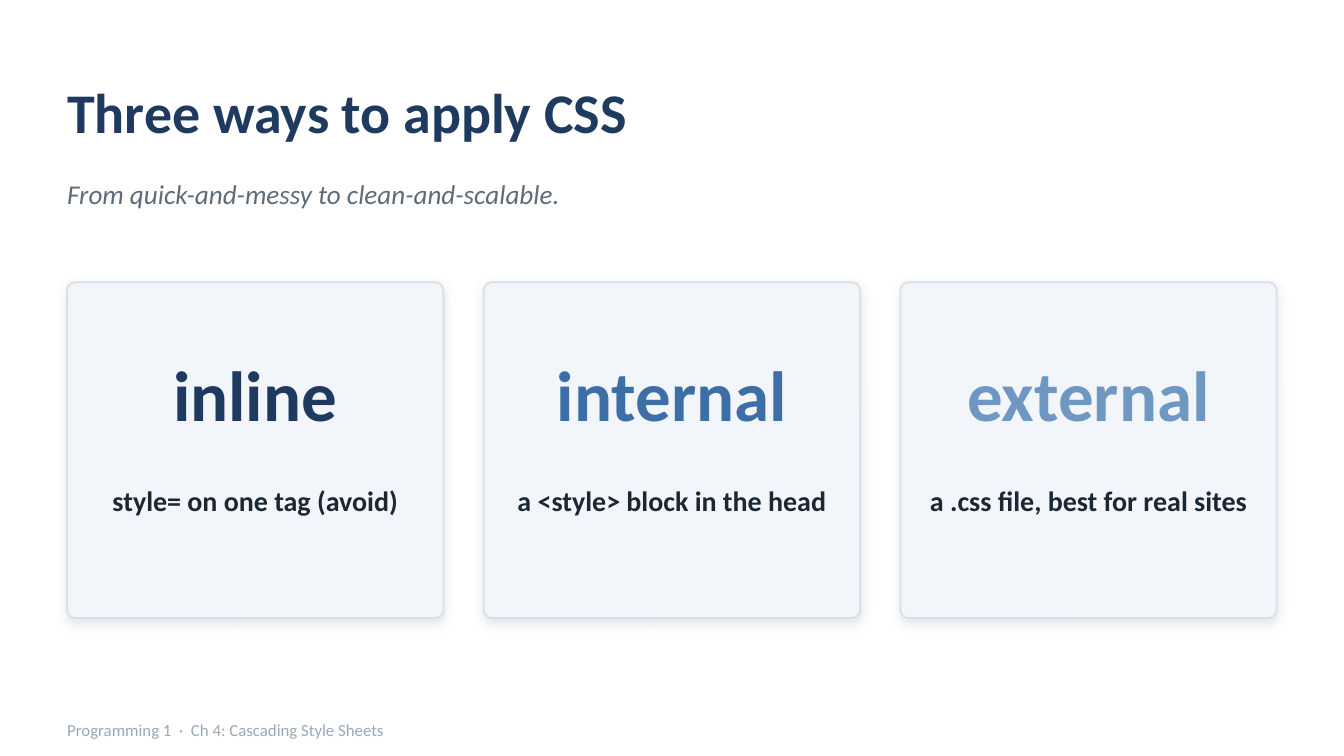
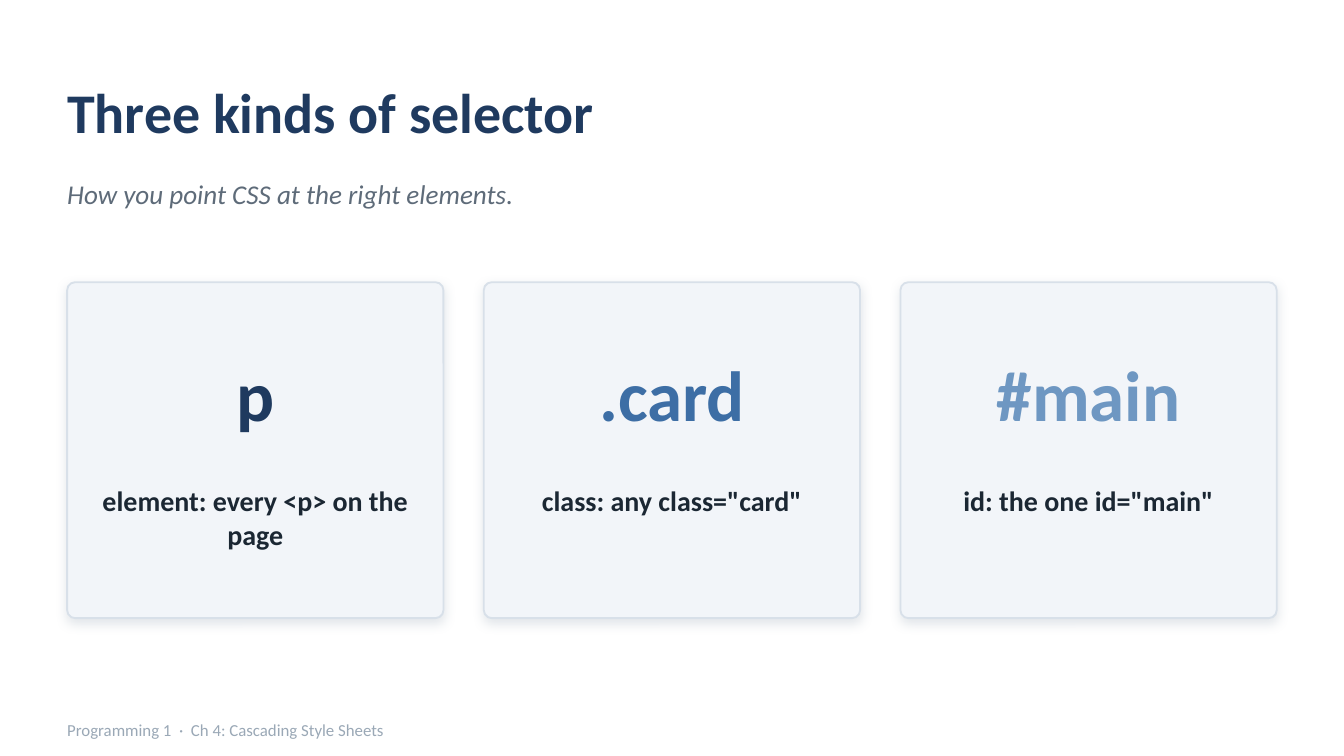
from lxml import etree
from pptx import Presentation
from pptx import util as u
from pptx.dml.color import RGBColor
from pptx.enum import shapes, text
from pptx.oxml import ns

COLORS = {
    "navy": "1F3A5F",
    "blue": "3D6EA5",
    "sky": "6E97C2",
    "ink": "1B2733",
    "slate": "5E6B79",
    "mist": "9AA8B6",
    "card": "F2F5F9",
    "border": "D8E0E9",
    "white": "FFFFFF",
}
FONT = "Calibri"
FOOTER = "Programming 1  ·  Ch 4: Cascading Style Sheets"

MARGIN = 0.5
CONTENT_WIDTH = 9
CARD_TOP, CARD_WIDTH, CARD_HEIGHT = 2.1, 2.8, 2.5
CARD_GAP = (CONTENT_WIDTH - 3 * CARD_WIDTH) / 2
CORNER_RADIUS = 0.06
TERM_INSET, CAPTION_INSET = 0.1, 0.15
TERM_COLORS = ["navy", "blue", "sky"]

SLIDES = [
    {
        "title": "Three ways to apply CSS",
        "subtitle": "From quick-and-messy to clean-and-scalable.",
        "cards": [
            ("inline", "style= on one tag (avoid)"),
            ("internal", "a <style> block in the head"),
            ("external", "a .css file, best for real sites"),
        ],
    },
    {
        "title": "Three kinds of selector",
        "subtitle": "How you point CSS at the right elements.",
        "cards": [
            ("p", "element: every <p> on the page"),
            (".card", 'class: any class="card"'),
            ("#main", 'id: the one id="main"'),
        ],
    },
]


def put_text(slide, content, left, top, width, height, size, color, bold=False,
             italic=False, align="LEFT", anchor="MIDDLE", shape=None):
    """Write one formatted line into the given shape, or into a new text box."""
    box = [u.Inches(length) for length in (left, top, width, height)]
    if shape is None:
        shape = slide.shapes.add_textbox(*box)
    else:
        shape.left, shape.top, shape.width, shape.height = box
    frame = shape.text_frame
    frame.word_wrap = True
    frame.auto_size = text.MSO_AUTO_SIZE.NONE
    frame.vertical_anchor = text.MSO_ANCHOR[anchor]
    frame.margin_left = frame.margin_right = frame.margin_top = frame.margin_bottom = 0
    paragraph = frame.paragraphs[0]
    paragraph.alignment = text.PP_ALIGN[align]
    run = paragraph.add_run()
    run.text = content
    run.font.name = FONT
    run.font.size = u.Pt(size)
    run.font.bold = bold
    run.font.italic = italic
    run.font.color.rgb = RGBColor.from_string(COLORS[color])


def add_card(slide, left):
    """Add a rounded panel with a thin border and a soft shadow below it."""
    card = slide.shapes.add_shape(
        shapes.MSO_SHAPE.ROUNDED_RECTANGLE,
        *[u.Inches(length) for length in (left, CARD_TOP, CARD_WIDTH, CARD_HEIGHT)])
    card.adjustments[0] = CORNER_RADIUS / CARD_HEIGHT
    card.fill.solid()
    card.fill.fore_color.rgb = RGBColor.from_string(COLORS["card"])
    card.line.color.rgb = RGBColor.from_string(COLORS["border"])
    card.line.width = u.Pt(1)
    card.shadow.inherit = False
    effects = card._element.spPr.find(ns.qn("a:effectLst"))
    shadow = etree.SubElement(
        effects, ns.qn("a:outerShdw"), blurRad=str(u.Pt(6)), dist=str(u.Pt(2)),
        dir=str(90 * 60000), algn="bl", rotWithShape="0")
    tint = etree.SubElement(shadow, ns.qn("a:srgbClr"), val=COLORS["mist"])
    etree.SubElement(tint, ns.qn("a:alpha"), val="28000")


presentation = Presentation()
presentation.slide_width = u.Inches(10)
presentation.slide_height = presentation.slide_width * 9 // 16
title_only = presentation.slide_layouts[5]

for content in SLIDES:
    slide = presentation.slides.add_slide(title_only)
    slide.background.fill.solid()
    slide.background.fill.fore_color.rgb = RGBColor.from_string(COLORS["white"])

    put_text(slide, content["title"], MARGIN, 0.4, CONTENT_WIDTH, 0.85, size=30,
             color="navy", bold=True, shape=slide.shapes.title)
    put_text(slide, content["subtitle"], MARGIN, 1.24, CONTENT_WIDTH, 0.4, size=14.5,
             color="slate", italic=True)

    for column, (term, caption) in enumerate(content["cards"]):
        left = MARGIN + column * (CARD_WIDTH + CARD_GAP)
        add_card(slide, left)
        put_text(slide, term, left + TERM_INSET, CARD_TOP + 0.35,
                 CARD_WIDTH - 2 * TERM_INSET, 0.95, size=38,
                 color=TERM_COLORS[column], bold=True, align="CENTER")
        put_text(slide, caption, left + CAPTION_INSET, CARD_TOP + 1.5,
                 CARD_WIDTH - 2 * CAPTION_INSET, 0.8, size=15,
                 color="ink", bold=True, align="CENTER", anchor="TOP")

    put_text(slide, FOOTER, MARGIN, 5.3, 8, 0.26, size=9, color="mist")

presentation.save("out.pptx")
